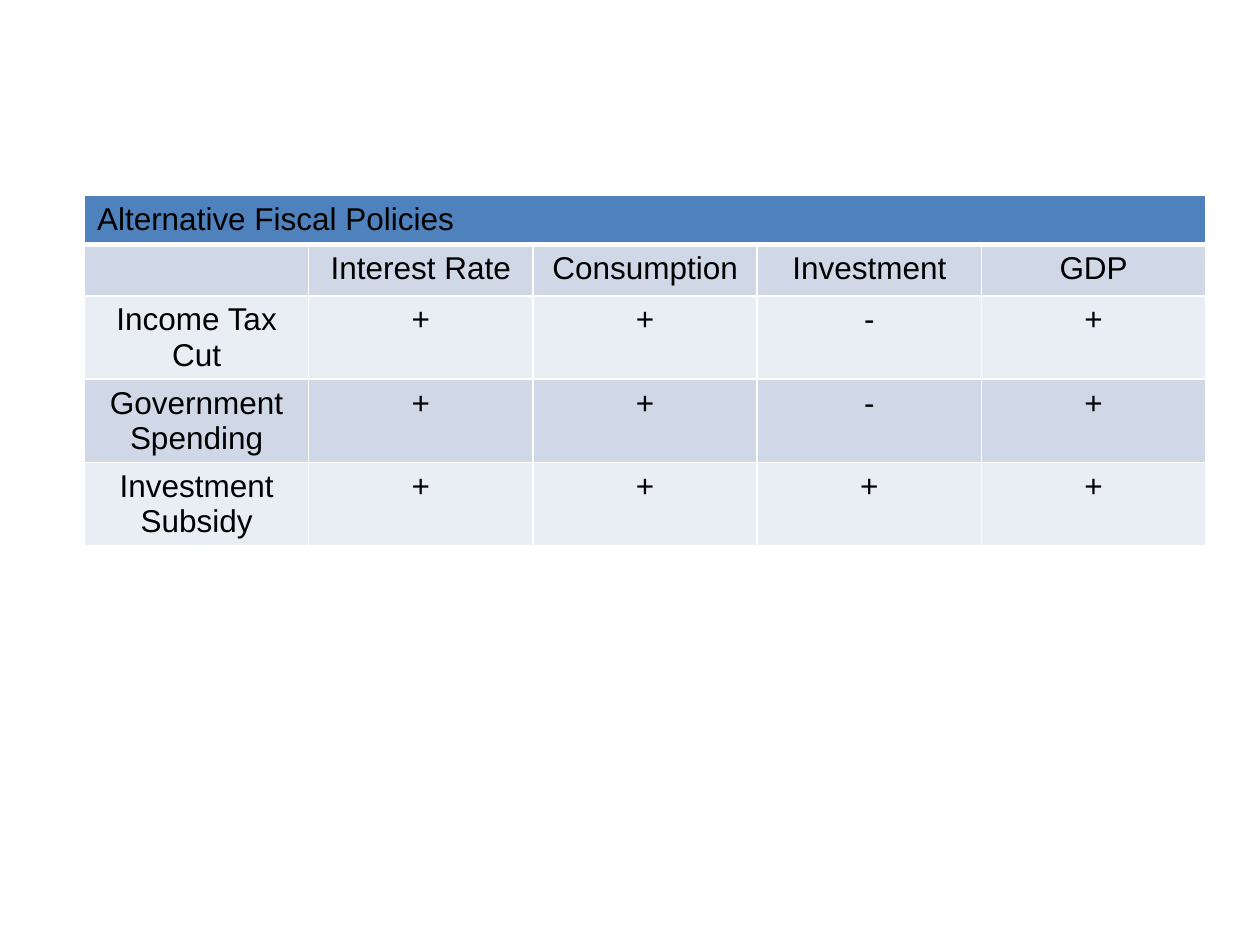
from lxml.etree import SubElement
from pptx import Presentation
from pptx.dml.color import RGBColor
from pptx.enum.text import PP_ALIGN
from pptx.oxml.ns import qn
from pptx.util import Inches, Pt

WIDE, HIGH = 10, 7.5
LEFT, TOP, COL = 0.67, 1.55, 1.78
ROWS = [0.39] + [0.41] * 4
HEAD, BANDS, WHITE = "4F81BD", ("E9EDF4", "D0D8E8"), "FFFFFF"
FONT = {"name": "Arial", "size": Pt(18), "bold": False}
TITLE = "Alternative Fiscal Policies"
DATA = [
    ["", "Interest Rate", "Consumption", "Investment", "GDP"],
    ["Income Tax Cut", "+", "+", "-", "+"],
    ["Government Spending", "+", "+", "-", "+"],
    ["Investment Subsidy", "+", "+", "+", "+"],
]


def color(code):
    return RGBColor.from_string(code)


def edge(cell, base):
    props = cell._tc.get_or_add_tcPr()
    for side in "LRTB":
        width = base if side == "B" else 1
        line = SubElement(props, qn(f"a:ln{side}"), w=str(Pt(width)))
        fill = SubElement(line, qn("a:solidFill"))
        SubElement(fill, qn("a:srgbClr"), val=WHITE)


def paint(cell, fill, base=1):
    edge(cell, base)
    cell.fill.solid()
    cell.fill.fore_color.rgb = color(fill)


def write(cell, text, align):
    cell.text = text
    para = cell.text_frame.paragraphs[0]
    para.alignment = align
    for item in [para, *para.runs]:
        for key, value in FONT.items():
            setattr(item.font, key, value)
        item.font.color.rgb = color("000000")


def add_grid(slide):
    count = len(DATA[0])
    frame = slide.shapes.add_table(
        len(ROWS), count, Inches(LEFT), Inches(TOP),
        Inches(COL * count), Inches(sum(ROWS)))
    table = frame.table
    for col in table.columns:
        col.width = Inches(COL)
    for row, height in zip(table.rows, ROWS):
        row.height = Inches(height)
    for cell in table.rows[0].cells:
        paint(cell, HEAD, 3)
    table.cell(0, 0).merge(table.cell(0, count - 1))
    write(table.cell(0, 0), TITLE, PP_ALIGN.LEFT)
    for r, line in enumerate(DATA, 1):
        for c, text in enumerate(line):
            cell = table.cell(r, c)
            paint(cell, BANDS[r % 2])
            write(cell, text, PP_ALIGN.CENTER)


def main():
    deck = Presentation()
    deck.slide_width, deck.slide_height = Inches(WIDE), Inches(HIGH)
    add_grid(deck.slides.add_slide(deck.slide_layouts[6]))
    deck.save("out.pptx")


if __name__ == "__main__":
    main()
